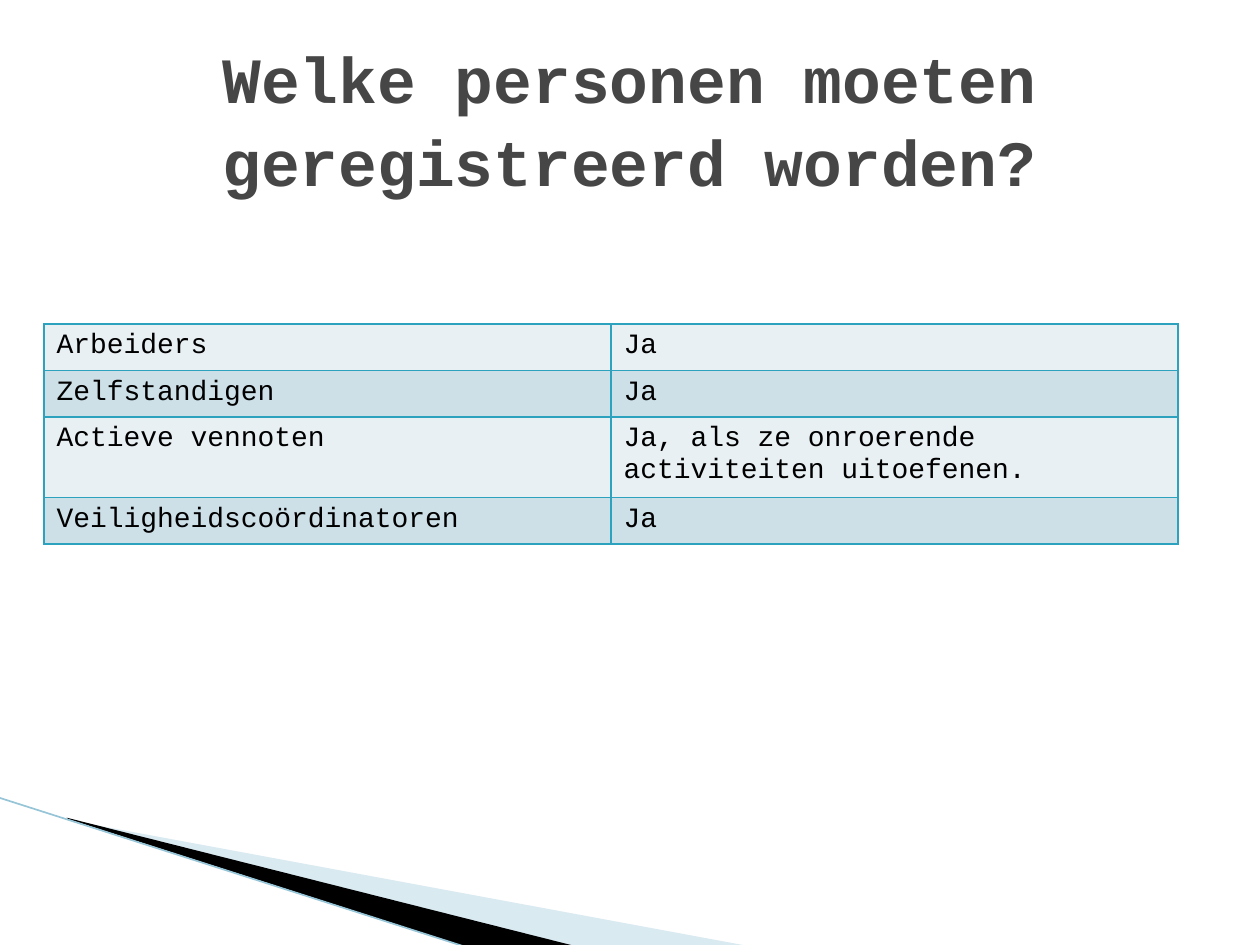
from lxml.etree import SubElement
from pptx import Presentation
from pptx.dml.color import RGBColor
from pptx.enum.shapes import MSO_CONNECTOR
from pptx.enum.text import MSO_ANCHOR, PP_ALIGN
from pptx.oxml.ns import qn
from pptx.util import Inches, Pt

TITLE = "Welke personen moeten geregistreerd worden?"
ROWS = [
    ("Arbeiders", "Ja"),
    ("Zelfstandigen", "Ja"),
    ("Actieve vennoten", "Ja, als ze onroerende activiteiten uitoefenen."),
    ("Veiligheidscoördinatoren", "Ja"),
]
ROW_HEIGHTS = [0.37, 0.37, 0.64, 0.37]
COL_WIDTH = 4.5
COLORS = {
    "title": "464646", "text": "000000", "border": "2DA2BF",
    "light": "E8F0F4", "dark": "CDE0E8",
    "wedge": "A0CBDC", "shade": "000000", "edge": "97C5D8",
}
WEDGES = [
    ([(0.55, 6.51), (5.95, 7.51), (4.56, 7.51), (0.55, 6.5)], "wedge", 40),
    ([(0.53, 6.49), (4.57, 7.51), (3.72, 7.52), (0.54, 6.5)], "shade", 100),
]


def rgb(name):
    return RGBColor.from_string(COLORS[name])


def write(tf, text, size=16, color="text", bold=False, align=PP_ALIGN.LEFT, spacing=1.0):
    p = tf.paragraphs[0]
    p.alignment = align
    p.line_spacing = spacing
    r = p.add_run()
    r.text = text
    r.font.name = "Courier New"
    r.font.size = Pt(size)
    r.font.bold = bold
    r.font.color.rgb = rgb(color)


def add_wedge(s, points, color, alpha):
    pts = [(Inches(x), Inches(y)) for x, y in points]
    fb = s.shapes.build_freeform(*pts[0])
    fb.add_line_segments(pts[1:], close=True)
    sp = fb.convert_to_shape()
    sp.shadow.inherit = False
    sp.fill.solid()
    sp.fill.fore_color.rgb = rgb(color)
    sp.line.fill.background()
    if alpha < 100:
        clr = sp.fill._xPr.find(".//" + qn("a:srgbClr"))
        SubElement(clr, qn("a:alpha"), val=str(alpha * 1000))


def set_borders(cell):
    tcPr = cell._tc.get_or_add_tcPr()
    for i, side in enumerate(("lnL", "lnR", "lnT", "lnB")):
        ln = tcPr.makeelement(qn("a:" + side), {"w": str(Pt(1))})
        fill = SubElement(ln, qn("a:solidFill"))
        SubElement(fill, qn("a:srgbClr"), val=COLORS["border"])
        tcPr.insert(i, ln)


def add_table(s):
    table = s.shapes.add_table(
        len(ROWS), 2, Inches(0.35), Inches(2.57),
        Inches(2 * COL_WIDTH), Inches(sum(ROW_HEIGHTS))).table
    table.first_row = False
    for col in table.columns:
        col.width = Inches(COL_WIDTH)
    for i, (texts, height) in enumerate(zip(ROWS, ROW_HEIGHTS)):
        table.rows[i].height = Inches(height)
        for j, text in enumerate(texts):
            cell = table.cell(i, j)
            cell.fill.solid()
            cell.fill.fore_color.rgb = rgb("dark" if i % 2 else "light")
            set_borders(cell)
            write(cell.text_frame, text)


def main():
    prs = Presentation()
    prs.slide_width, prs.slide_height = Inches(10), Inches(7.5)
    s = prs.slides.add_slide(prs.slide_layouts[5])

    for points, color, alpha in WEDGES:
        add_wedge(s, points, color, alpha)
    edge = s.shapes.add_connector(
        MSO_CONNECTOR.STRAIGHT, Inches(-0.01), Inches(6.33), Inches(3.71), Inches(7.52))
    edge.line.color.rgb = rgb("edge")
    edge.line.width = Pt(0.95)
    SubElement(edge._element.spPr, qn("a:effectLst"))

    add_table(s)

    title = s.shapes.title
    title.left, title.top = Inches(0.5), Inches(0.3)
    title.width, title.height = Inches(9), Inches(1.25)
    tf = title.text_frame
    tf.word_wrap = True
    tf.vertical_anchor = MSO_ANCHOR.MIDDLE
    write(tf, TITLE, size=36.9, color="title", bold=True, align=PP_ALIGN.CENTER, spacing=1.07)

    prs.save("out.pptx")


if __name__ == "__main__":
    main()
